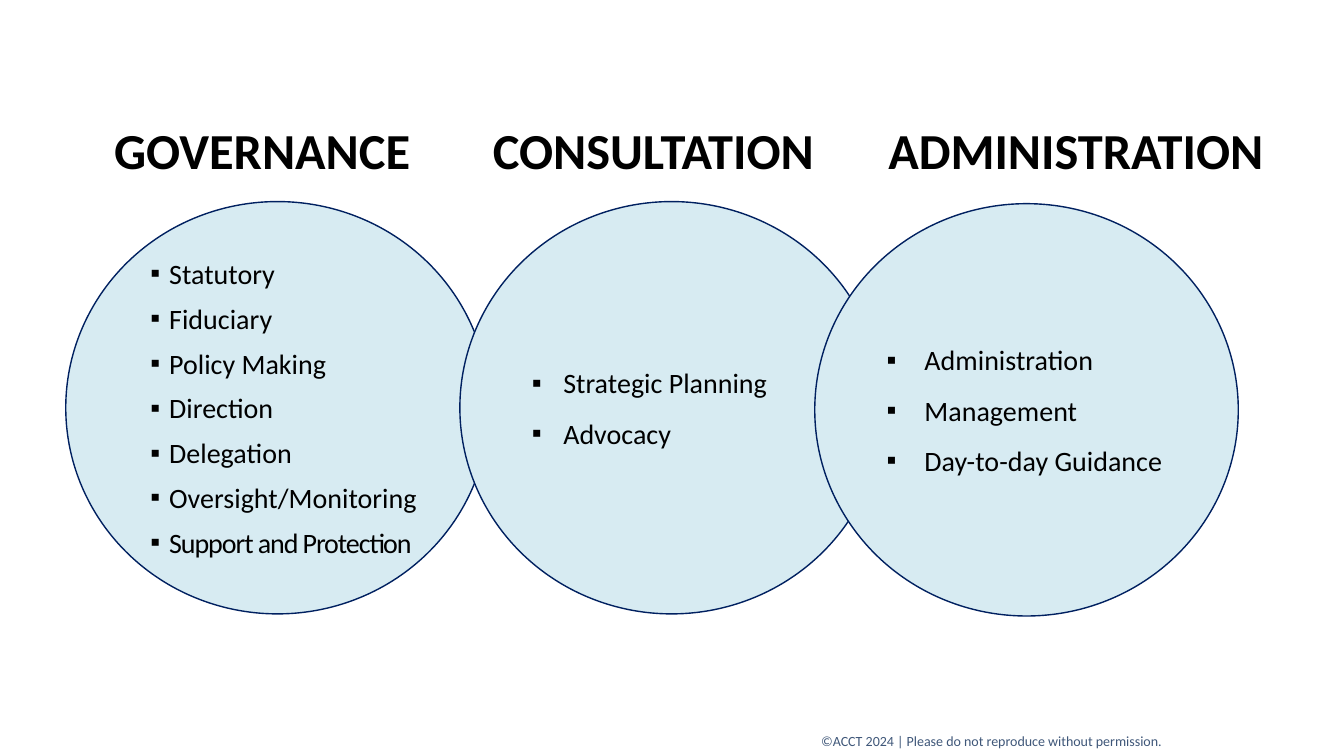
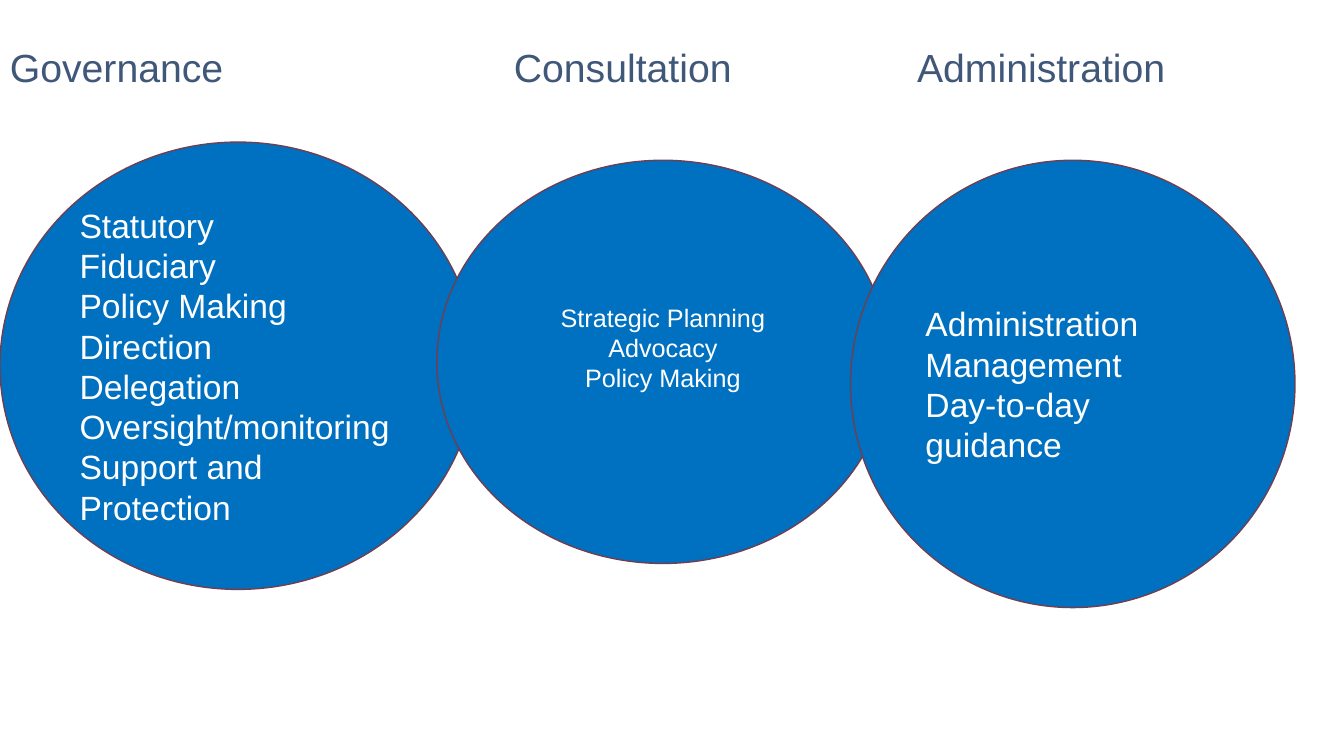
from lxml import etree
from pptx import Presentation
from pptx.dml.color import RGBColor
from pptx.enum.shapes import MSO_SHAPE
from pptx.enum.text import MSO_ANCHOR, PP_ALIGN
from pptx.oxml.ns import qn
from pptx.util import Pt

CONNECTOR_CIRCLE, OVAL = MSO_SHAPE.FLOWCHART_CONNECTOR, MSO_SHAPE.OVAL
TOP, MIDDLE = MSO_ANCHOR.TOP, MSO_ANCHOR.MIDDLE
LEFT, CENTER = PP_ALIGN.LEFT, PP_ALIGN.CENTER

BLACK, WHITE, SLATE = "000000", "FFFFFF", "3F5779"
PALE_BLUE, NAVY = "D7EBF2", "002060"
BLUE, PLUM = "0070C0", "6F3F51"
TIGHT = {"Support and Protection": -0.8}  # letter spacing of the longest line


def color(hex_value):
    return RGBColor.from_string(hex_value)


def add_tag(parent, tag, **attributes):
    return etree.SubElement(parent, qn(tag), attributes)


def write(frame, lines, size=20, font="Calibri", ink=BLACK, bold=False,
          align=LEFT, anchor=MIDDLE, wrap=True, insets=(7.2, 3.6, 7.2, 3.6),
          line=None, after=None, bullet=None, tabs=(), tracking=None):
    """Fill a text frame; bullet is (text indent, hanging width) in points."""
    frame.word_wrap = wrap
    frame.vertical_anchor = anchor
    (frame.margin_left, frame.margin_top,
     frame.margin_right, frame.margin_bottom) = map(Pt, insets)
    for index, text in enumerate(lines):
        paragraph = frame.add_paragraph() if index else frame.paragraphs[0]
        properties = paragraph._p.get_or_add_pPr()
        if bullet:
            indent, hanging = bullet
            properties.set("marL", str(Pt(indent)))
            properties.set("indent", str(-Pt(hanging)))
            add_tag(properties, "a:buFont", typeface="Arial")
            add_tag(properties, "a:buChar", char="▪")
        if tabs:
            stops = add_tag(properties, "a:tabLst")
            for stop in tabs:
                add_tag(stops, "a:tab", pos=str(Pt(stop)), algn="l")
        paragraph.alignment = align
        if line:
            paragraph.line_spacing = line
        if after:
            paragraph.space_after = Pt(after)
        run = paragraph.add_run()
        run.text = text
        run.font.name, run.font.size, run.font.bold = font, Pt(size), bold
        run.font.color.rgb = color(ink)
        if tracking and text in tracking:
            run._r.get_or_add_rPr().set("spc", str(round(tracking[text] * 100)))


class Deck:
    def __init__(self):
        self.presentation = Presentation()
        self.presentation.slide_width = Pt(960)
        self.presentation.slide_height = Pt(540)
        self.slide = None

    def new_slide(self):
        layout = self.presentation.slide_layouts[6]
        self.slide = self.presentation.slides.add_slide(layout)

    def text(self, box, lines, **style):
        label = self.slide.shapes.add_textbox(*map(Pt, box))
        write(label.text_frame, lines, **style)

    def heading(self, left, width, title):
        self.text((left, 87, width, 45), [title], size=36, bold=True,
                  line=0.9, insets=(3, 0, 0, 0))

    def circle(self, kind, box, fill, outline, lines, **style):
        circle = self.slide.shapes.add_shape(kind, *map(Pt, box))
        circle.shadow.inherit = False
        circle.fill.solid()
        circle.fill.fore_color.rgb = color(fill)
        circle.line.color.rgb = color(outline)
        circle.line.width = Pt(1)
        write(circle.text_frame, lines, **style)

    def footer(self):
        self.text((579.5, 520, 261.5, 19.5),
                  ["©ACCT 2024 | Please do not reproduce without permission."],
                  size=10, ink=SLATE, anchor=TOP, wrap=False)


def bulleted_roles(deck):
    deck.new_slide()
    # Circles, each overlapping the one before
    roles = [
        (47, 144, 8, (22.5, 13.5),
         ["Statutory", "Fiduciary", "Policy Making", "Direction", "Delegation",
          "Oversight/Monitoring", "Support and Protection"]),
        (328.5, 144, 12, (22.5, 22.5), ["Strategic Planning", "Advocacy"]),
        (582, 145.5, 12, (27, 27),
         ["Administration", "Management", "Day-to-day Guidance"]),
    ]
    for left, top, after, bullet, duties in roles:
        deck.circle(CONNECTOR_CIRCLE, (left, top, 302.5, 294.5), PALE_BLUE, NAVY,
                    duties, after=after, bullet=bullet, tracking=TIGHT)
    # Headings
    for left, width, title in [(78.5, 224.5, "GOVERNANCE"),
                               (349, 246, "CONSULTATION"),
                               (631.5, 273.5, "ADMINISTRATION")]:
        deck.heading(left, width, title)
    deck.footer()


def plain_roles(deck):
    deck.new_slide()
    # Headings on one tabbed line
    deck.text((0, 31, 940, 422.5), ["Governance\tConsultation\tAdministration"],
              size=28, font="Arial", ink=SLATE, anchor=TOP, line=0.9,
              tabs=(360, 648))
    # Circles; the middle text sits a little above centre
    roles = [
        ((0, 101.5, 340, 319.5), {"size": 24},
         ["Statutory", "Fiduciary", "Policy Making", "Direction", "Delegation",
          "Oversight/monitoring", "Support and Protection"]),
        ((312, 114.5, 323, 288),
         {"size": 18, "align": CENTER, "insets": (7.2, 3.6, 7.2, 24.5)},
         ["Strategic Planning", "Advocacy", "Policy Making"]),
        ((607.5, 114.5, 317.5, 319.5), {"size": 24},
         ["Administration", "Management", "Day-to-day guidance"]),
    ]
    for box, style, duties in roles:
        deck.circle(OVAL, box, BLUE, PLUM, duties, font="Arial", ink=WHITE, **style)


def main():
    deck = Deck()
    bulleted_roles(deck)
    plain_roles(deck)
    deck.presentation.save("out.pptx")


if __name__ == "__main__":
    main()
